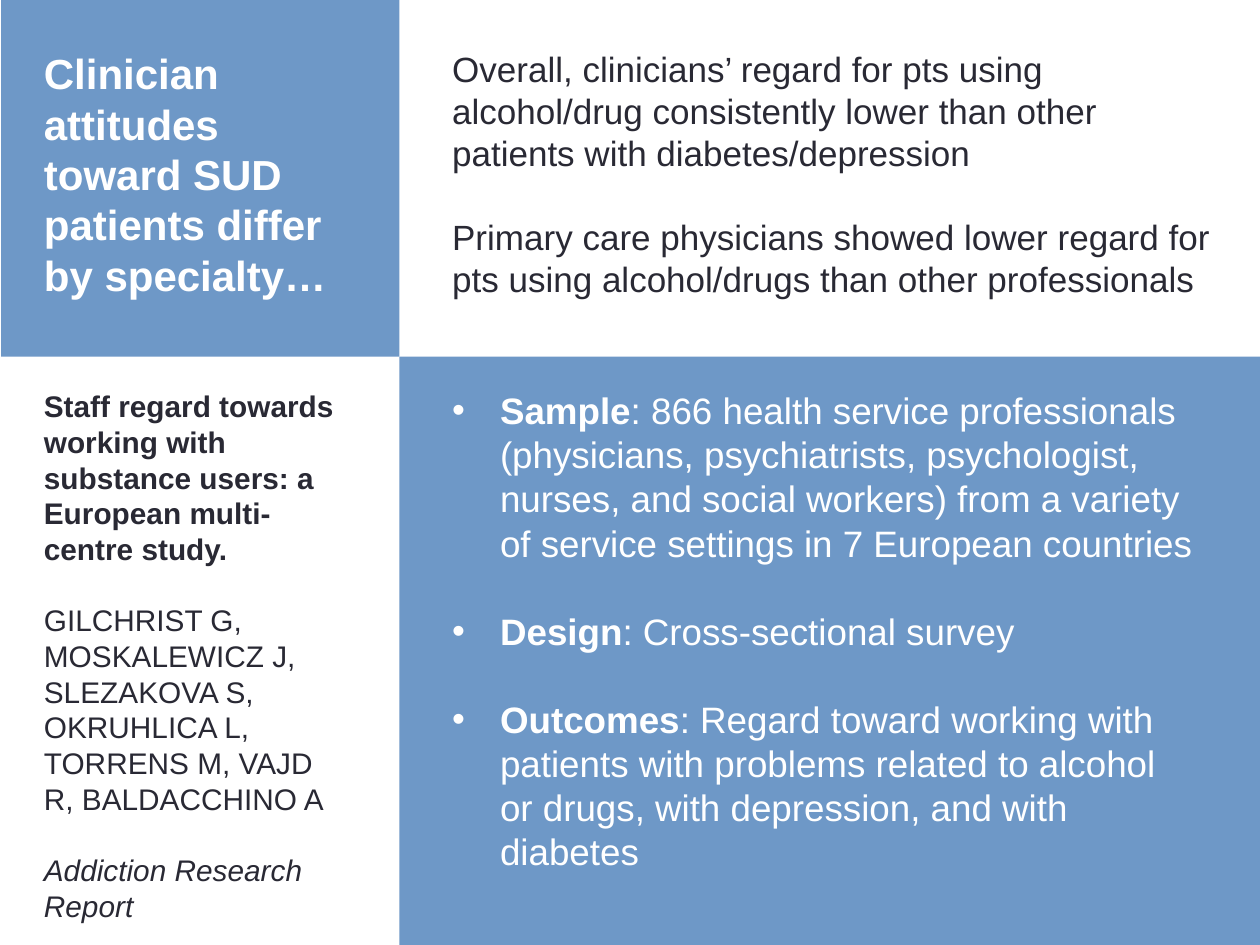
from lxml.etree import SubElement
from pptx import Presentation
from pptx.dml.color import RGBColor
from pptx.enum.shapes import MSO_SHAPE as Shape
from pptx.enum.text import MSO_AUTO_SIZE as AutoSize
from pptx.oxml.ns import qn
from pptx.util import Emu, Pt

PX = 9144
COLORS = {"blue": "6E98C7", "white": "FFFFFF", "ink": "292934"}
LEFT, RIGHT = 25, 349
TOP, BOTTOM = 33, 303
SPLIT_X, SPLIT_Y = 317, 283


def px(value):
    return Emu(value * PX)


def color(name):
    return RGBColor.from_string(COLORS[name])


class SlideBuilder:
    font = "Arial"
    line_ratio = 1.2
    indent = 38

    def __init__(self, page):
        self.page = page

    def panel(self, left, top, width, height):
        panel = self.page.shapes.add_shape(
            Shape.RECTANGLE, px(left), px(top), px(width), px(height))
        panel.shadow.inherit = False
        panel.fill.solid()
        panel.fill.fore_color.rgb = color("blue")
        panel.line.fill.background()

    def text(self, left, top, width, height, paragraphs, size, ink, bullets=False):
        box = self.page.shapes.add_textbox(px(left), px(top), px(width), px(height))
        frame = box.text_frame
        frame.word_wrap = True
        frame.auto_size = AutoSize.SHAPE_TO_FIT_TEXT
        pitch = Pt(round(size * self.line_ratio, 1))
        for index, runs in enumerate(paragraphs):
            para = frame.add_paragraph() if index else frame.paragraphs[0]
            para.line_spacing = pitch
            if index:
                para.space_before = pitch
            if bullets:
                self.bullet(para)
            para.font.name = self.font
            para.font.size = Pt(size)
            para.font.color.rgb = color(ink)
            for words, style in runs:
                span = para.add_run()
                span.text = words
                span.font.bold = "bold" in style
                span.font.italic = "italic" in style

    def bullet(self, para):
        props = para._p.get_or_add_pPr()
        props.set("marL", str(px(self.indent)))
        props.set("indent", str(-px(self.indent)))
        SubElement(props, qn("a:buFont"), typeface=self.font)
        SubElement(props, qn("a:buChar"), char="•")


def main():
    deck = Presentation()
    deck.slide_width, deck.slide_height = px(1000), px(750)
    builder = SlideBuilder(deck.slides.add_slide(deck.slide_layouts[6]))

    builder.panel(1, -1, SPLIT_X - 1, SPLIT_Y + 1)
    builder.text(LEFT, TOP, 258, 212, [
        [("Clinician attitudes toward SUD patients differ by specialty…", "bold")],
    ], 24, "white")

    builder.panel(SPLIT_X, SPLIT_Y, 1000 - SPLIT_X, 750 - SPLIT_Y)
    study = {
        "Sample": "866 health service professionals (physicians, psychiatrists, "
                  "psychologist, nurses, and social workers) from a variety of "
                  "service settings in 7 European countries",
        "Design": "Cross-sectional survey",
        "Outcomes": "Regard toward working with patients with problems related to "
                    "alcohol or drugs, with depression, and with diabetes",
    }
    builder.text(RIGHT, BOTTOM, 609, 399, [
        [(label, "bold"), (f": {detail}", "")] for label, detail in study.items()
    ], 21, "white", bullets=True)

    builder.text(LEFT, BOTTOM, 258, 439, [
        [("Staff regard towards working with substance users: a European "
          "multi-centre study.", "bold")],
        [("GILCHRIST G, MOSKALEWICZ J, SLEZAKOVA S, OKRUHLICA L, TORRENS M, "
          "VAJD R, BALDACCHINO A", "")],
        [("Addiction Research Report", "italic")],
    ], 17, "ink")

    builder.text(RIGHT, TOP, 626, 212, [
        [("Overall, clinicians’ regard for pts using alcohol/drug consistently "
          "lower than other patients with diabetes/depression", "")],
        [("Primary care physicians showed lower regard for pts using "
          "alcohol/drugs than other professionals", "")],
    ], 20, "ink")

    deck.save("out.pptx")


if __name__ == "__main__":
    main()
